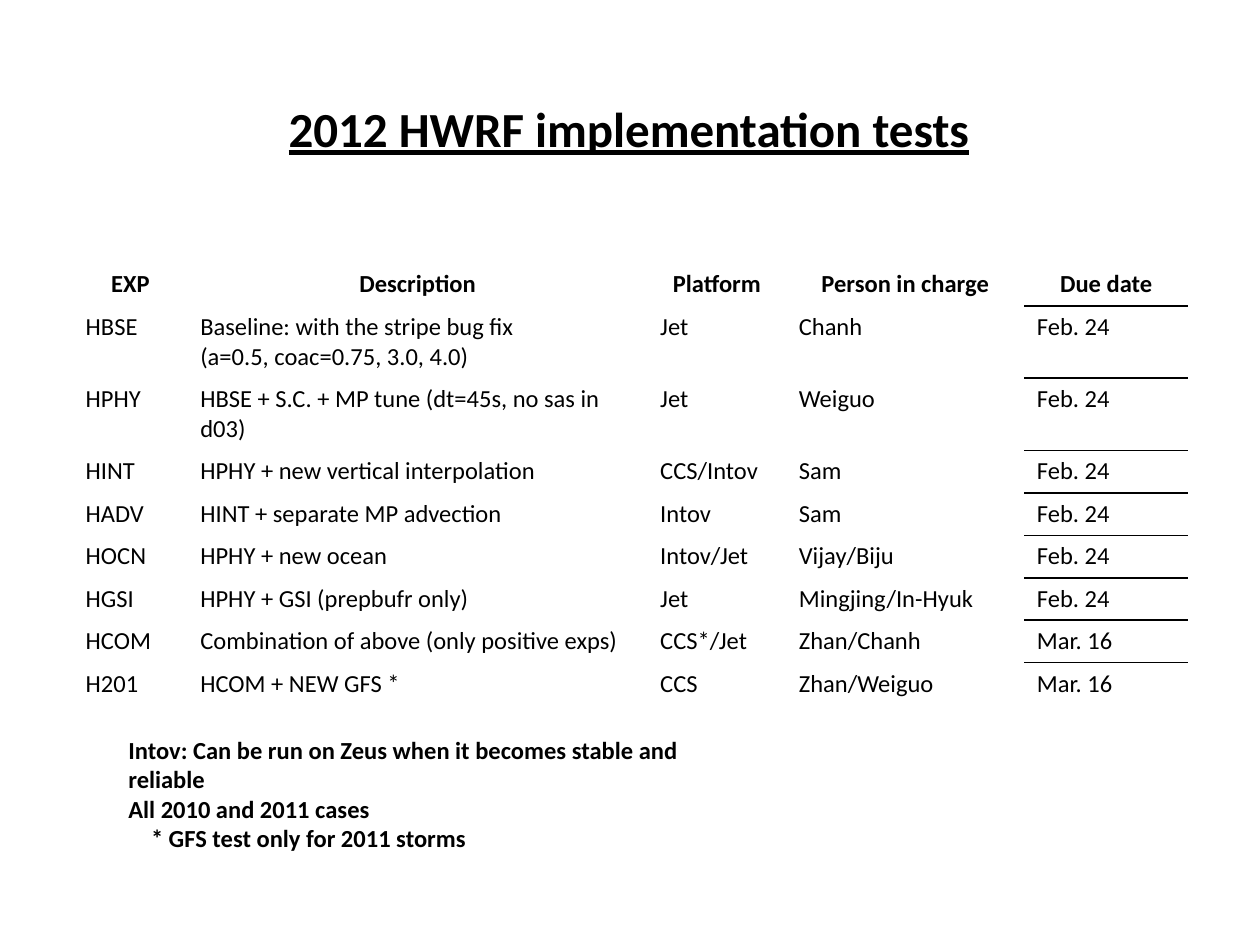
from typing import NamedTuple

from lxml import etree
from pptx import Presentation
from pptx.dml.color import RGBColor
from pptx.enum import text
from pptx.oxml import ns
from pptx.util import Inches, Pt

COLORS = {"ink": "000000"}
FONT = "Calibri"
COL_WIDTHS = [0.91, 3.65, 1.1, 1.89, 1.3]
ROW_HEIGHT, TALL_ROW_HEIGHT = 0.33, 0.57


class Experiment(NamedTuple):
    exp: str
    description: str
    platform: str
    person: str
    due: str


HEADER = Experiment("EXP", "Description", "Platform", "Person in charge", "Due date")
EXPERIMENTS = [
    Experiment("HBSE", "Baseline: with the stripe bug fix\n(a=0.5, coac=0.75, 3.0, 4.0)",
               "Jet", "Chanh", "Feb. 24"),
    Experiment("HPHY", "HBSE + S.C. + MP tune (dt=45s, no sas in d03)", "Jet", "Weiguo", "Feb. 24"),
    Experiment("HINT", "HPHY + new vertical interpolation", "CCS/Intov", "Sam", "Feb. 24"),
    Experiment("HADV", "HINT + separate MP advection", "Intov", "Sam", "Feb. 24"),
    Experiment("HOCN", "HPHY + new ocean", "Intov/Jet", "Vijay/Biju", "Feb. 24"),
    Experiment("HGSI", "HPHY + GSI (prepbufr only)", "Jet", "Mingjing/In-Hyuk", "Feb. 24"),
    Experiment("HCOM", "Combination of above (only positive exps)", "CCS*/Jet", "Zhan/Chanh", "Mar. 16"),
    Experiment("H201", "HCOM + NEW GFS *", "CCS", "Zhan/Weiguo", "Mar. 16"),
]
NOTES = """Intov: Can be run on Zeus when it becomes stable and reliable
All 2010 and 2011 cases
* GFS test only for 2011 storms"""


def write(tf, content: str, size: float = 14, bold: bool = False,
          underline: bool = False, align=text.PP_ALIGN.LEFT) -> None:
    for i, line in enumerate(content.split("\n")):
        p = tf.paragraphs[0] if i == 0 else tf.add_paragraph()
        p.alignment = align
        r = p.add_run()
        r.text = line
        f = r.font
        f.name, f.size, f.bold, f.underline = FONT, Pt(size), bold, underline
        f.color.rgb = RGBColor.from_string(COLORS["ink"])


def set_borders(cell, ruled_sides: str) -> None:
    tc_pr = cell._tc.get_or_add_tcPr()
    for side in "LRTB":
        ln = etree.SubElement(tc_pr, ns.qn(f"a:ln{side}"))
        if side in ruled_sides:
            ln.set("w", str(Pt(1)))
            fill = etree.SubElement(ln, ns.qn("a:solidFill"))
            etree.SubElement(fill, ns.qn("a:srgbClr"), val=COLORS["ink"])
        else:
            etree.SubElement(ln, ns.qn("a:noFill"))


def add_title(s) -> None:
    sp = s.shapes.title
    sp.left, sp.top, sp.width, sp.height = map(Inches, (2.17, 0.73, 5.64, 1.03))
    tf = sp.text_frame
    tf.word_wrap = False
    tf.auto_size = text.MSO_AUTO_SIZE.NONE
    tf.vertical_anchor = text.MSO_ANCHOR.TOP
    write(tf, "2012 HWRF implementation tests", size=28, bold=True,
          underline=True, align=text.PP_ALIGN.CENTER)


def add_experiments(s, rows: list[Experiment]) -> None:
    heights = [TALL_ROW_HEIGHT if len(row.description) > 42 else ROW_HEIGHT for row in rows]
    table = s.shapes.add_table(len(rows), len(COL_WIDTHS), Inches(0.58), Inches(2.09),
                               Inches(sum(COL_WIDTHS)), Inches(sum(heights))).table
    table.first_row = table.horz_banding = False
    for col, width in zip(table.columns, COL_WIDTHS):
        col.width = Inches(width)
    for i, row in enumerate(rows):
        table.rows[i].height = Inches(heights[i])
        for j, value in enumerate(row):
            cell = table.cell(i, j)
            is_header = i == 0
            write(cell.text_frame, value, bold=is_header,
                  align=text.PP_ALIGN.CENTER if is_header else text.PP_ALIGN.LEFT)
            ruled = ""
            if j == len(row) - 1:
                ruled = ("" if is_header else "T") + ("B" if i < len(rows) - 1 else "")
            set_borders(cell, ruled)
            cell.fill.background()


def add_notes(s) -> None:
    tf = s.shapes.add_textbox(*map(Inches, (0.92, 5.9, 5.15, 0.8))).text_frame
    tf.word_wrap = True
    tf.vertical_anchor = text.MSO_ANCHOR.MIDDLE
    write(tf, NOTES, bold=True)
    tf.paragraphs[-1]._p.get_or_add_pPr().set("marL", str(Inches(0.18)))


def main() -> None:
    prs = Presentation()
    prs.slide_width, prs.slide_height = Inches(10), Inches(7.5)
    s = prs.slides.add_slide(prs.slide_layouts[5])
    add_title(s)
    add_experiments(s, [HEADER, *EXPERIMENTS])
    add_notes(s)
    prs.save("out.pptx")


if __name__ == "__main__":
    main()
